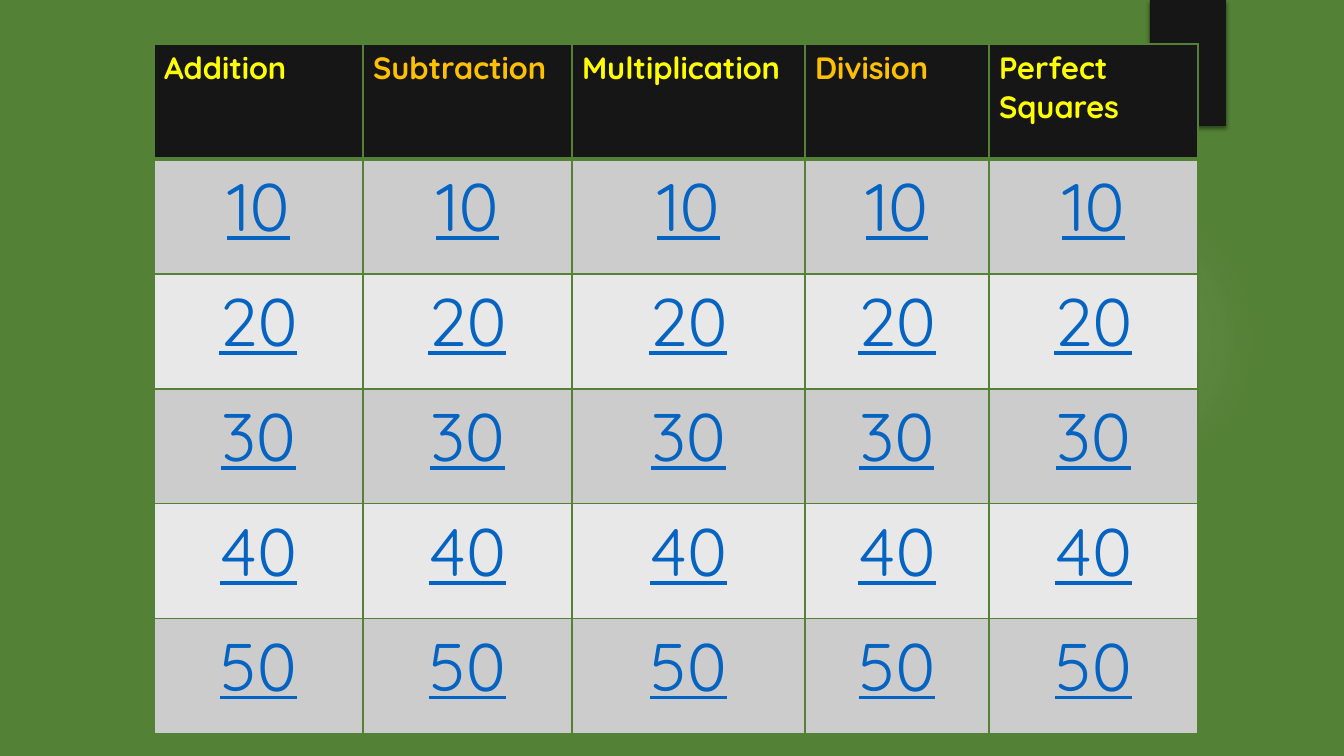
from lxml.etree import SubElement
from pptx import Presentation
from pptx.dml.color import RGBColor
from pptx.enum.shapes import MSO_SHAPE
from pptx.enum.text import PP_ALIGN
from pptx.oxml import parse_xml
from pptx.oxml.ns import nsdecls, qn
from pptx.util import Pt

EMU_PER_PX = 914400 / 100.8
FONT = "Quicksand"
GREEN, BLACK, YELLOW, ORANGE = "538135", "171616", "FFFF00", "FFC000"
LINK_BLUE, DARK_GREY, LIGHT_GREY = "0563C1", "CCCCCC", "E8E8E8"

TOPICS = ["Addition", "Subtraction", "Multiplication", "Division", "Perfect Squares"]
POINTS = [10, 20, 30, 40, 50]
COLUMN_WIDTHS = [209, 209, 233, 184, 209]
ROW_HEIGHT = 115


def px(length):
    return round(length * EMU_PER_PX)


def color(hex_value):
    return RGBColor.from_string(hex_value)


def add_plain_shape(slide, kind, left, top, width, height):
    shape = slide.shapes.add_shape(kind, px(left), px(top), px(width), px(height))
    shape.shadow.inherit = False
    shape.line.fill.background()
    return shape


def add_glow(slide):
    """Add a soft white circle that fades out from its centre."""
    glow = add_plain_shape(slide, MSO_SHAPE.OVAL, 949, 184, 310, 310)
    glow.fill.background()
    stops = "".join(
        f'<a:gs pos="{position * 1000}"><a:srgbClr val="FFFFFF">'
        f'<a:alpha val="{opacity * 1000}"/></a:srgbClr></a:gs>'
        for position, opacity in [(0, 7), (36, 6), (69, 0), (100, 0)]
    )
    gradient = parse_xml(
        f'<a:gradFill {nsdecls("a")}><a:gsLst>{stops}</a:gsLst><a:path path="circle">'
        '<a:fillToRect l="50000" t="50000" r="50000" b="50000"/></a:path></a:gradFill>'
    )
    properties = glow.element.spPr
    properties.replace(properties.find(qn("a:noFill")), gradient)


def add_corner_tab(slide):
    tab = add_plain_shape(slide, MSO_SHAPE.RECTANGLE, 1150, 0, 76, 126)
    tab.fill.solid()
    tab.fill.fore_color.rgb = color(BLACK)
    effects = tab.element.spPr.find(qn("a:effectLst"))
    shadow = SubElement(effects, qn("a:outerShdw"), blurRad=str(Pt(3)), dist=str(Pt(2)),
                        dir="5400000", algn="t", rotWithShape="0")
    shade = SubElement(shadow, qn("a:srgbClr"), val="000000")
    SubElement(shade, qn("a:alpha"), val="45000")


def set_borders(cell, top_width, bottom_width):
    properties = cell._tc.get_or_add_tcPr()
    widths = {"lnL": 1, "lnR": 1, "lnT": top_width, "lnB": bottom_width}
    for side, width in widths.items():
        line = SubElement(properties, qn(f"a:{side}"), w=str(Pt(width)))
        fill = SubElement(line, qn("a:solidFill"))
        SubElement(fill, qn("a:srgbClr"), val=GREEN)


def fill_cell(cell, text, background, text_color, size, header):
    set_borders(cell, 1, 3 if header else 1)
    cell.fill.solid()
    cell.fill.fore_color.rgb = color(background)
    para = cell.text_frame.paragraphs[0]
    para.alignment = PP_ALIGN.LEFT if header else PP_ALIGN.CENTER
    span = para.add_run()
    span.text = text
    span.font.name = FONT
    span.font.size = Pt(size)
    span.font.bold = header
    span.font.underline = not header
    span.font.color.rgb = color(text_color)


def add_game_board(slide):
    row_count = len(POINTS) + 1
    board = slide.shapes.add_table(
        row_count, len(TOPICS), px(154), px(44),
        px(sum(COLUMN_WIDTHS)), px(row_count * ROW_HEIGHT),
    ).table
    board.horz_banding = False
    for column, width in zip(board.columns, COLUMN_WIDTHS):
        column.width = px(width)
    for row in board.rows:
        row.height = px(ROW_HEIGHT)
    for column, topic in enumerate(TOPICS):
        topic_color = ORANGE if column % 2 else YELLOW
        fill_cell(board.cell(0, column), topic, BLACK, topic_color, 22, True)
        for row, points in enumerate(POINTS, start=1):
            background = DARK_GREY if row % 2 else LIGHT_GREY
            fill_cell(board.cell(row, column), str(points), background, LINK_BLUE, 48, False)
            if row == 1:
                top_line = board.cell(row, column)._tc.tcPr.find(qn("a:lnT"))
                top_line.set("w", str(Pt(3)))


def main():
    deck = Presentation()
    deck.slide_width, deck.slide_height = px(1344), px(756)
    page = deck.slides.add_slide(deck.slide_layouts[6])
    page.background.fill.solid()
    page.background.fill.fore_color.rgb = color(GREEN)
    add_glow(page)
    add_corner_tab(page)
    add_game_board(page)
    deck.save("out.pptx")


if __name__ == "__main__":
    main()
